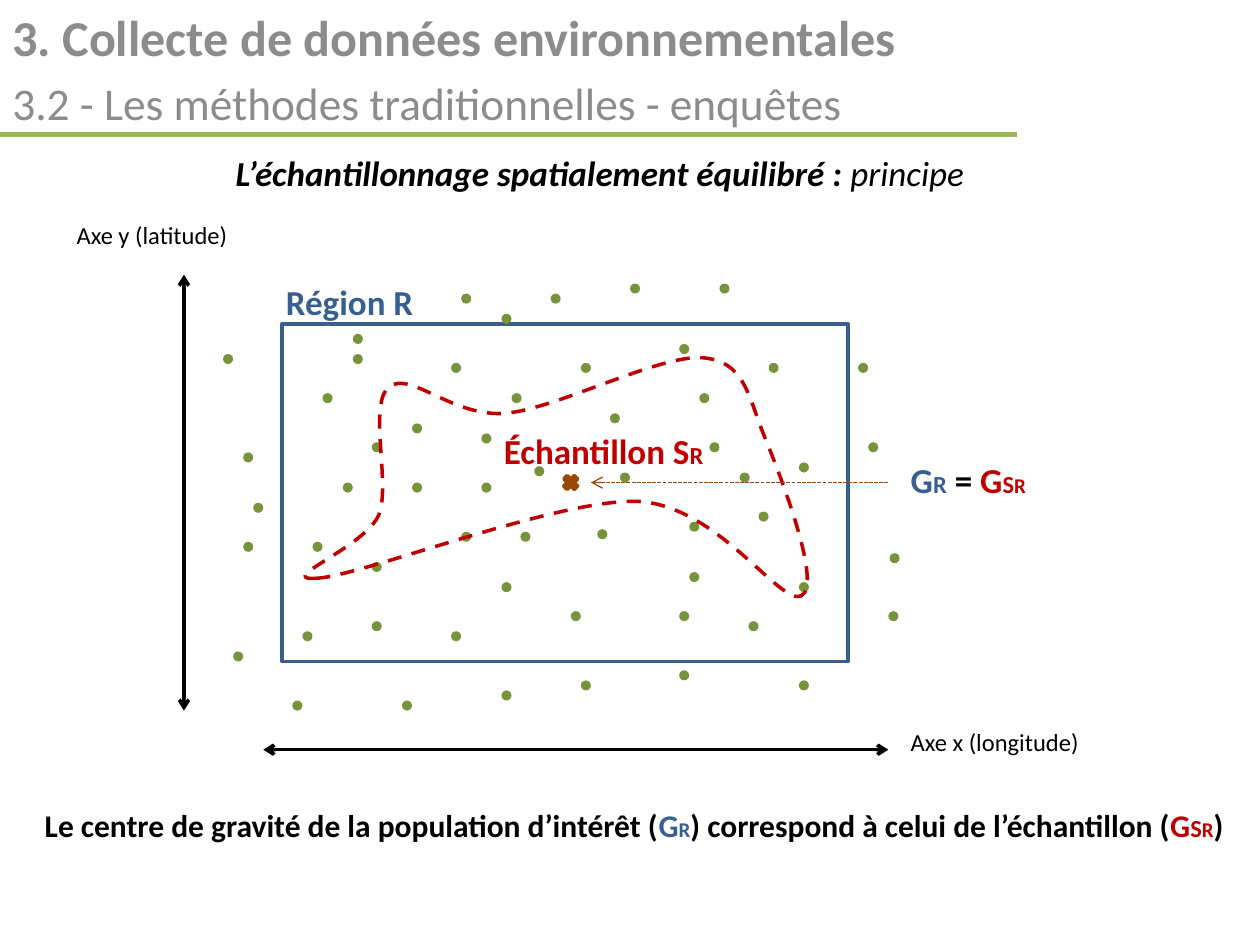
from dataclasses import dataclass
from typing import Optional

from lxml.etree import SubElement
from pptx import Presentation
from pptx.dml.color import RGBColor as Rgb
from pptx.enum.dml import MSO_LINE as Dash
from pptx.enum.shapes import MSO_CONNECTOR as Conn, MSO_SHAPE as Kind
from pptx.enum.text import PP_ALIGN as Align
from pptx.oxml.ns import qn
from pptx.util import Pt

PX = 9144
BLUE, RED, GREEN, BROWN = "376092", "C00000", "77933C", "984807"
GREY, BLACK = "8C8C8C", "000000"


@dataclass
class Run:
    text: str
    size: float
    color: str = BLACK
    bold: bool = True
    italic: bool = False


@dataclass
class Label:
    box: tuple[int, int, int, int]
    lines: list[list[Run]]
    align: Align = Align.LEFT
    gap: float = 0


@dataclass
class Rule:
    start: tuple[int, int]
    end: tuple[int, int]
    color: str
    width: float
    ends: tuple[str, ...] = ()
    dash: Optional[Dash] = None


def paint(color: str) -> Rgb:
    return Rgb.from_string(color)


def apply(item, values: dict) -> None:
    for name, value in values.items():
        setattr(item, name, value)


def stroke(line, color: str, width: float, dash: Optional[Dash] = None) -> None:
    line.color.rgb = paint(color)
    apply(line, {"width": Pt(width), "dash_style": dash})


def style(shape, fill: str = "", edge: str = "", width: float = 2,
          dash: Optional[Dash] = None) -> None:
    shape.shadow.inherit = False
    if fill:
        shape.fill.solid()
        shape.fill.fore_color.rgb = paint(fill)
    else:
        shape.fill.background()
    if edge:
        stroke(shape.line, edge, width, dash)
    else:
        shape.line.fill.background()


def add_shape(shapes, kind: Kind, box: tuple[int, int, int, int], **look) -> None:
    style(shapes.add_shape(kind, *(n * PX for n in box)), **look)


def add_dots(shapes, spots: list[tuple[int, int]]) -> None:
    for x, y in spots:
        add_shape(shapes, Kind.OVAL, (x, y, 8, 8), fill=GREEN)


def add_label(shapes, label: Label) -> None:
    frame = shapes.add_textbox(*(n * PX for n in label.box)).text_frame
    frame.word_wrap = True
    for i, runs in enumerate(label.lines):
        para = frame.add_paragraph() if i else frame.paragraphs[0]
        apply(para, {"alignment": label.align, "space_before": Pt(label.gap)})
        for run in runs:
            part = para.add_run()
            part.text = run.text
            apply(part.font, {"name": "Calibri", "size": Pt(run.size),
                              "bold": run.bold, "italic": run.italic})
            part.font.color.rgb = paint(run.color)


def add_rule(shapes, rule: Rule) -> None:
    ends = (n * PX for n in rule.start + rule.end)
    link = shapes.add_connector(Conn.STRAIGHT, *ends)
    stroke(link.line, rule.color, rule.width, rule.dash)
    for end in rule.ends:
        SubElement(link.line._ln, qn(f"a:{end}")).set("type", "arrow")
    SubElement(link._element.spPr, qn("a:effectLst"))


def add_curve(shapes, points: list[tuple[int, int]], color: str) -> None:
    pen = shapes.build_freeform(*points[0], scale=PX)
    pen.add_line_segments(points[1:], close=True)
    shape = pen.convert_to_shape()
    route = next(shape._element.iter(qn("a:path")))
    steps = route.findall(qn("a:lnTo"))
    for i in range(0, len(steps), 3):
        bend = SubElement(route, qn("a:cubicBezTo"))
        for step in steps[i:i + 3]:
            bend.append(step[0])
            route.remove(step)
    route.append(route.find(qn("a:close")))
    style(shape, edge=color, dash=Dash.DASH)


INNER = [
    (280, 265), (406, 312), (295, 351), (256, 312), (272, 383), (413, 422),
    (474, 420), (398, 462), (453, 485), (547, 454), (295, 446), (587, 375),
    (634, 367), (424, 370), (484, 328), (327, 336), (539, 273), (327, 383),
    (366, 422), (492, 375), (547, 414), (602, 406), (555, 312), (358, 288),
    (295, 493), (539, 485), (280, 281), (461, 288), (610, 288), (382, 383),
    (689, 351), (382, 344), (240, 501), (634, 462), (248, 430),
]
OUTER = [
    (437, 233), (500, 225), (177, 281), (571, 225), (681, 288), (705, 485),
    (398, 249), (366, 233), (201, 399), (193, 359), (232, 556), (398, 548),
    (594, 493), (539, 532), (706, 439), (634, 540), (193, 430), (319, 556),
    (185, 517), (358, 501), (563, 351), (461, 540),
]
SAMPLE = [
    (251, 459), (285, 458), (441, 396), (506, 398), (570, 401), (619, 481),
    (636, 473), (653, 464), (620, 379), (607, 347), (594, 316), (592, 287),
    (558, 284), (524, 281), (443, 324), (402, 328), (360, 332), (326, 294),
    (309, 307), (292, 320), (310, 383), (301, 408), (291, 434), (217, 461),
    (251, 459),
]
BOTH = ("headEnd", "tailEnd")
RULES = [
    Rule((0, 107), (807, 107), "98B955", 3),
    Rule((146, 218), (146, 564), BLACK, 2, BOTH),
    Rule((209, 595), (705, 595), BLACK, 2, BOTH),
    Rule((705, 383), (469, 383), BROWN, 0.75, ("tailEnd",), Dash.SQUARE_DOT),
]
LABELS = [
    Label((0, 0, 980, 110), [
        [Run("3. Collecte de données environnementales", 28.7, GREY)],
        [Run("3.2 - Les méthodes traditionnelles - enquêtes", 25.9, GREY, False)],
    ], gap=5.2),
    Label((114, 115, 724, 71), [[
        Run("L’échantillonnage spatialement équilibré : ", 20, italic=True),
        Run("principe", 20, bold=False, italic=True),
    ]], Align.CENTER, 4),
    Label((217, 218, 252, 44), [[Run("Région R", 20, BLUE)]]),
    Label((390, 336, 189, 44), [[Run("Échantillon S", 20, RED), Run("R", 14, RED)]]),
    Label((51, 170, 213, 34), [[Run("Axe y (latitude)", 14, bold=False)]]),
    Label((713, 572, 213, 34), [[Run("Axe x (longitude)", 14, bold=False)]]),
    Label((713, 359, 134, 44), [[
        Run("G", 20, BLUE), Run("R", 14, BLUE), Run(" = ", 20),
        Run("G", 20, RED), Run("S", 14, RED), Run("R", 12, RED),
    ]]),
    Label((20, 635, 961, 40), [[
        Run(" Le centre de gravité de la population d’intérêt (", 18),
        Run("G", 18, BLUE), Run("R", 12, BLUE),
        Run(") correspond à celui de l’échantillon (", 18),
        Run("G", 18, RED), Run("S", 14, RED), Run("R", 12, RED), Run(")", 18),
    ]]),
]


def main() -> None:
    deck = Presentation()
    apply(deck, {"slide_width": 1000 * PX, "slide_height": 750 * PX})
    shapes = deck.slides.add_slide(deck.slide_layouts[6]).shapes
    add_shape(shapes, Kind.RECTANGLE, (224, 257, 449, 268), edge="3A5F8C")
    add_dots(shapes, INNER)
    add_curve(shapes, SAMPLE, RED)
    for label in LABELS:
        add_label(shapes, label)
    add_shape(shapes, Kind.MATH_MULTIPLY, (445, 375, 16, 16), fill=BROWN, edge=BROWN)
    for rule in RULES:
        add_rule(shapes, rule)
    add_dots(shapes, OUTER)
    deck.save("out.pptx")


if __name__ == "__main__":
    main()
